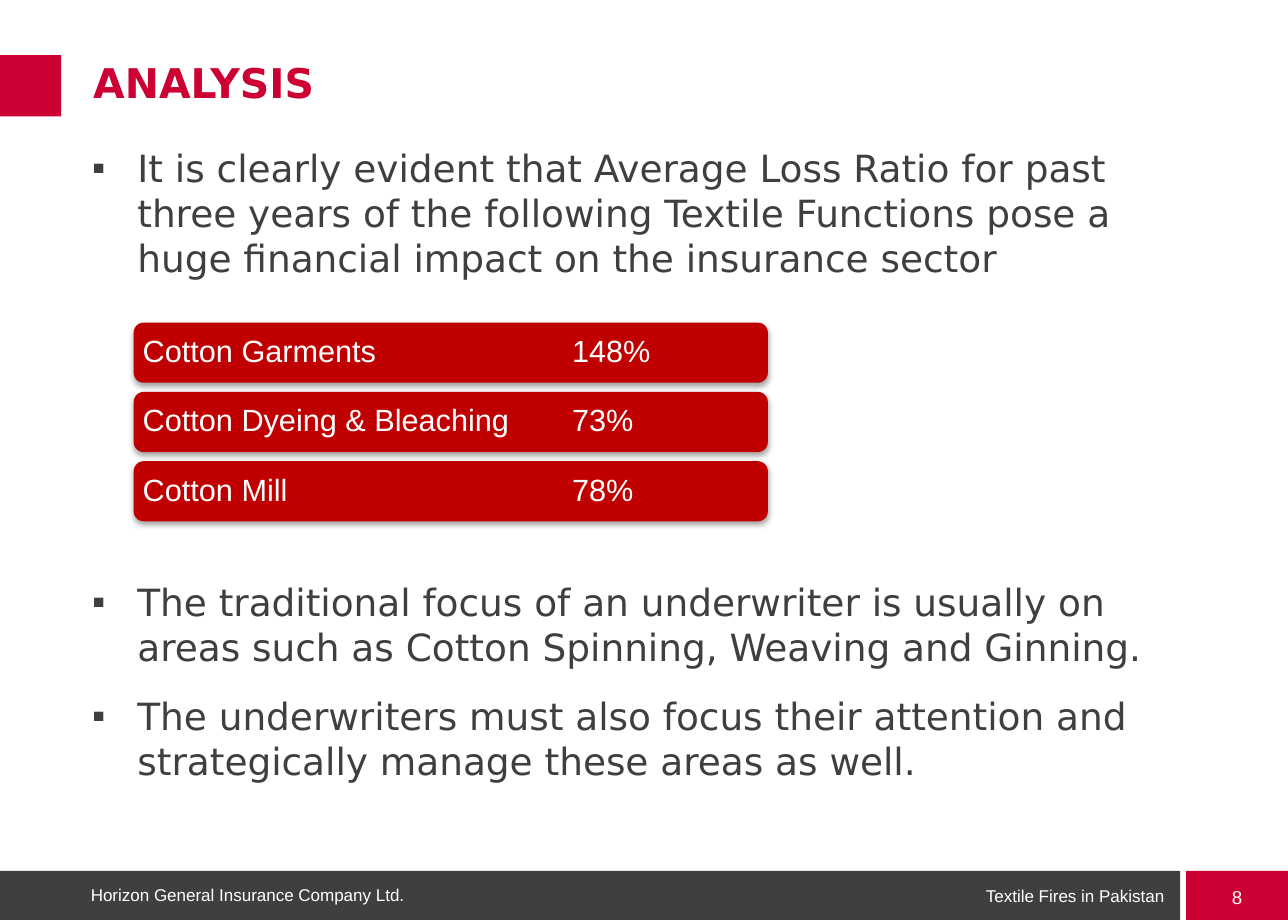
from dataclasses import dataclass

from lxml import etree
from pptx import Presentation
from pptx.dml.color import RGBColor
from pptx.enum.shapes import MSO_SHAPE
from pptx.enum.text import MSO_ANCHOR, PP_ALIGN
from pptx.oxml.ns import qn
from pptx.util import Inches, Pt

RECTANGLE = MSO_SHAPE.RECTANGLE
ROUNDED = MSO_SHAPE.ROUNDED_RECTANGLE
TOP, MIDDLE = MSO_ANCHOR.TOP, MSO_ANCHOR.MIDDLE
LEFT, CENTER, RIGHT = PP_ALIGN.LEFT, PP_ALIGN.CENTER, PP_ALIGN.RIGHT

COLORS = {
    "crimson": "CC0033",
    "bar": "C00000",
    "charcoal": "3F3F3F",
    "white": "FFFFFF",
    "shadow": "000000",
}
HEADING_FONT = "DejaVu Sans"
LABEL_FONT = "Arial"


@dataclass(frozen=True)
class Box:
    left: float
    top: float
    width: float
    height: float

    def lengths(self) -> tuple:
        return tuple(Inches(n) for n in (self.left, self.top, self.width, self.height))


@dataclass(frozen=True)
class LossRatio:
    function: str
    percent: int


@dataclass(frozen=True)
class BulletBlock:
    box: Box
    paragraphs: tuple[str, ...]


@dataclass(frozen=True)
class FooterLabel:
    box: Box
    text: str
    align: PP_ALIGN


FOOTER_BAR = Box(0, 7.1, 9.62, 0.42)
PAGE_BOX = Box(9.67, 7.1, 0.83, 0.42)
TITLE_MARK = Box(0, 0.45, 0.5, 0.5)
TITLE_BOX = Box(0.76, 0.46, 9.11, 0.47)
FIRST_RATIO = Box(1.09, 2.63, 5.17, 0.49)
RATIO_PITCH = 0.565
PERCENT_TAB = 3.5

RATIOS = (
    LossRatio("Cotton Garments", 148),
    LossRatio("Cotton Dyeing & Bleaching", 73),
    LossRatio("Cotton Mill", 78),
)
BULLET_BLOCKS = (
    BulletBlock(Box(0.75, 1.18, 9.12, 1.2), (
        "It is clearly evident that Average Loss Ratio for past three years of the "
        "following Textile Functions pose a huge financial impact on the insurance sector",
    )),
    BulletBlock(Box(0.75, 4.72, 9.12, 2.18), (
        "The traditional focus of an underwriter is usually on areas such as "
        "Cotton Spinning, Weaving and Ginning.",
        "The underwriters must also focus their attention and strategically manage "
        "these areas as well.",
    )),
)
FOOTER_LABELS = (
    FooterLabel(Box(0.74, 7.08, 4.19, 0.42), "Horizon General Insurance Company Ltd.", LEFT),
    FooterLabel(Box(5.3, 7.09, 4.19, 0.42), "Textile Fires in Pakistan", RIGHT),
)


def add_block(slide, box: Box, color: str, kind=RECTANGLE):
    shape = slide.shapes.add_shape(kind, *box.lengths())
    shape.shadow.inherit = False
    shape.fill.solid()
    shape.fill.fore_color.rgb = RGBColor.from_string(COLORS[color])
    shape.line.fill.background()
    return shape


def add_text_box(slide, box: Box):
    return slide.shapes.add_textbox(*box.lengths())


def write_text(shape, *texts: str, size: float, font: str = LABEL_FONT,
               color: str = "white", bold: bool = False, align=LEFT, anchor=MIDDLE,
               inset: float = 0, line_spacing: float = 1.0, space_before: float = 0) -> None:
    frame = shape.text_frame
    frame.word_wrap = True
    frame.vertical_anchor = anchor
    frame.margin_left = frame.margin_right = Inches(inset)
    frame.margin_top = frame.margin_bottom = Inches(inset)
    for index, text in enumerate(texts):
        paragraph = frame.add_paragraph() if index else frame.paragraphs[0]
        paragraph.alignment = align
        paragraph.line_spacing = line_spacing
        paragraph.space_before = Pt(space_before)
        run = paragraph.add_run()
        run.text = text
        run.font.name = font
        run.font.size = Pt(size)
        run.font.bold = bold
        run.font.color.rgb = RGBColor.from_string(COLORS[color])


def add_bullets(shape) -> None:
    indent = Inches(0.37)
    for paragraph in shape.text_frame.paragraphs:
        properties = paragraph._p.get_or_add_pPr()
        properties.set("marL", str(indent))
        properties.set("indent", str(-indent))
        etree.SubElement(properties, qn("a:buFont"), typeface=LABEL_FONT)
        etree.SubElement(properties, qn("a:buChar"), char="▪")


def add_tab_stop(shape, position: float) -> None:
    properties = shape.text_frame.paragraphs[0]._p.get_or_add_pPr()
    tabs = etree.SubElement(properties, qn("a:tabLst"))
    etree.SubElement(tabs, qn("a:tab"), pos=str(Inches(position)), algn="l")


def add_drop_shadow(shape) -> None:
    effects = shape._element.spPr.find(qn("a:effectLst"))
    shadow = etree.SubElement(effects, qn("a:outerShdw"), blurRad=str(Pt(3.1)),
                              dist=str(Pt(1.8)), dir="5400000", rotWithShape="0")
    tint = etree.SubElement(shadow, qn("a:srgbClr"), val=COLORS["shadow"])
    etree.SubElement(tint, qn("a:alpha"), val="35000")


def add_ratio_bar(slide, ratio: LossRatio, row: int) -> None:
    box = Box(FIRST_RATIO.left, FIRST_RATIO.top + row * RATIO_PITCH,
              FIRST_RATIO.width, FIRST_RATIO.height)
    bar = add_block(slide, box, "bar", ROUNDED)
    add_drop_shadow(bar)
    write_text(bar, f"{ratio.function}\t{ratio.percent}%", size=18, inset=0.05,
               line_spacing=0.9)
    add_tab_stop(bar, PERCENT_TAB)


def main() -> None:
    presentation = Presentation()
    presentation.slide_width = Inches(10.5)
    presentation.slide_height = Inches(7.5)
    slide = presentation.slides.add_slide(presentation.slide_layouts[6])

    # Footer
    add_block(slide, FOOTER_BAR, "charcoal")
    write_text(add_block(slide, PAGE_BOX, "crimson"), "8", size=11, align=CENTER)
    for label in FOOTER_LABELS:
        write_text(add_text_box(slide, label.box), label.text, size=10, align=label.align)

    # Title
    add_block(slide, TITLE_MARK, "crimson")
    write_text(add_text_box(slide, TITLE_BOX), "ANALYSIS", size=24, font=HEADING_FONT,
               color="crimson", bold=True, line_spacing=0.9)

    # Bulleted text above and below the ratios
    for block in BULLET_BLOCKS:
        body = add_text_box(slide, block.box)
        write_text(body, *block.paragraphs, size=22, font=HEADING_FONT,
                   color="charcoal", anchor=TOP, space_before=14)
        add_bullets(body)

    # Loss ratio bars
    for row, ratio in enumerate(RATIOS):
        add_ratio_bar(slide, ratio, row)

    presentation.save("out.pptx")


if __name__ == "__main__":
    main()
